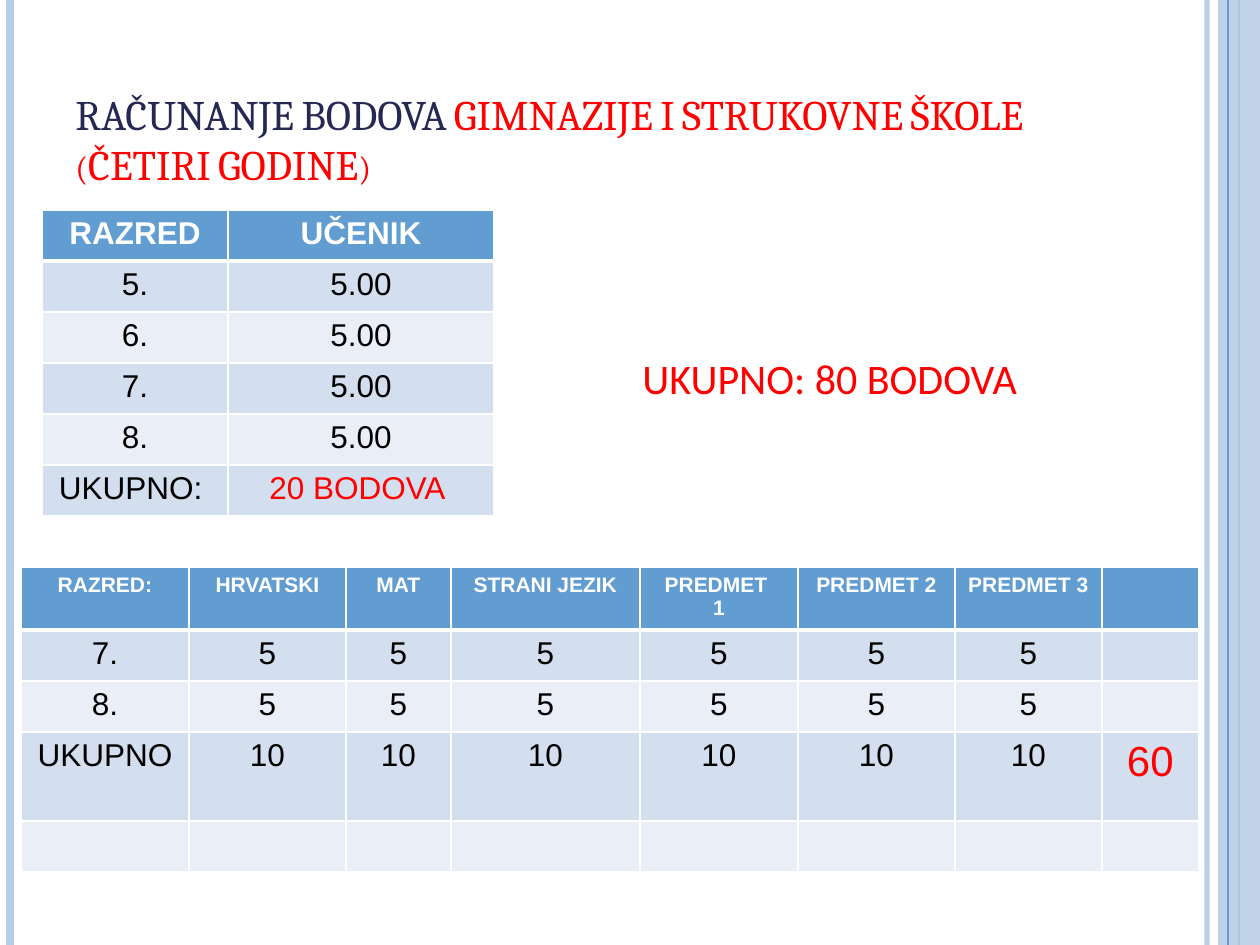
from dataclasses import dataclass

from lxml.etree import SubElement as Sub
from pptx import Presentation
from pptx.dml.color import RGBColor as Rgb
from pptx.enum.shapes import MSO_CONNECTOR as Conn, MSO_SHAPE as Shape
from pptx.enum.text import MSO_ANCHOR as Anchor, PP_ALIGN as Align
from pptx.oxml.ns import qn
from pptx.util import Pt

SCALE = 914400 / 126  # EMU per px
WIDE, HIGH = 1260, 945


@dataclass(frozen=True)
class Theme:
    white: str = "FFFFFF"
    black: str = "000000"
    navy: str = "242852"
    red: str = "FF0000"
    blue: str = "629DD1"
    pale: str = "B7CCE5"
    bands: tuple = ("D3DFEE", "EAEFF7")
    big: int = 24
    body: int = 18
    small: int = 12
    head: str = "Cambria"
    grid: str = "Arial"
    note: str = "Calibri"


T = Theme()


def px(n):
    return round(n * SCALE)


def tint(fill, color, alpha=100):
    """Solid colour with optional opacity in percent."""
    fill.solid()
    fill.fore_color.rgb = Rgb.from_string(color)
    if alpha < 100:
        node = fill._xPr.find(qn("a:solidFill"))[0]
        Sub(node, qn("a:alpha"), val=str(alpha * 1000))


def put(para, text, size=T.body, font=T.grid, color=T.black, bold=False, caps=False):
    """Add one formatted run."""
    run = para.add_run()
    run.text = text
    style = run.font
    style.size, style.name, style.bold = Pt(size), font, bold
    style.color.rgb = Rgb.from_string(color)
    if caps:
        run._r.get_or_add_rPr().set("cap", "small")


def rule(slide, x, color, width, alpha=100):
    """Full-height vertical line."""
    line = slide.shapes.add_connector(Conn.STRAIGHT, px(x), 0, px(x), px(HIGH))
    line.line.width = Pt(width)
    tint(line.line.fill, color, alpha)
    Sub(line._element.spPr, qn("a:effectLst"))


def band(slide, x, width, color, alpha):
    """Full-height strip."""
    box = slide.shapes.add_shape(Shape.RECTANGLE, px(x), 0, px(width), px(HIGH))
    box.shadow.inherit = False
    box.line.fill.background()
    tint(box.fill, color, alpha)


def label(slide, area, runs, anchor=Anchor.TOP):
    """Text box with one paragraph of (text, format) runs."""
    frame = slide.shapes.add_textbox(*map(px, area)).text_frame
    frame.word_wrap = True
    frame.vertical_anchor = anchor
    for text, style in runs:
        put(frame.paragraphs[0], text, **style)


def edge(cell, last):
    """White cell borders, with the bottom one of the given width."""
    props = cell._tc.get_or_add_tcPr()
    for side, width in zip("LRTB", (1, 1, 1, last)):
        line = Sub(props, qn("a:ln" + side), w=str(Pt(width)))
        Sub(Sub(line, qn("a:solidFill")), qn("a:srgbClr"), val=T.white)


def grid(slide, left, top, cols, rows, data, head, marks):
    """Banded table; marks gives special formats by (row, column)."""
    area = map(px, (left, top, sum(cols), sum(rows)))
    table = slide.shapes.add_table(len(rows), len(cols), *area).table
    table.first_row = table.horz_banding = False
    for col, width in zip(table.columns, cols):
        col.width = px(width)
    for row, height in zip(table.rows, rows):
        row.height = px(height)
    for r, line in enumerate(data):
        for c, text in enumerate(line):
            cell = table.cell(r, c)
            edge(cell, 1 if r else 3)
            tint(cell.fill, T.bands[(r - 1) % 2] if r else T.blue)
            style = marks.get((r, c), {}) if r else head
            frame = cell.text_frame
            for i, part in enumerate(text.split("\n")):
                para = frame.add_paragraph() if i else frame.paragraphs[0]
                para.alignment = Align.CENTER
                if part:
                    put(para, part, **style)


def main():
    deck = Presentation()
    deck.slide_width, deck.slide_height = px(WIDE), px(HIGH)
    slide = deck.slides.add_slide(deck.slide_layouts[6])

    # Side stripes
    rule(slide, 1207, T.pale, 3, 93)
    rule(slide, 10, T.pale, 4.5)
    rule(slide, 1239, T.blue, 1.5)
    band(slide, 1218, 42, T.pale, 87)
    rule(slide, 1228, T.blue, 0.75)

    # Title
    title = dict(size=T.big, font=T.head, caps=True)
    label(slide, (63, 38, 1029, 157), [
        ("RAČUNANJE BODOVA ", dict(title, color=T.navy)),
        ("GIMNAZIJE I STRUKOVNE ŠKOLE (ČETIRI GODINE)", dict(title, color=T.red)),
    ], Anchor.BOTTOM)

    # Average marks by year
    head = dict(color=T.white, bold=True)
    years = [[f"{n}.", "5.00"] for n in range(5, 9)]
    data = [["RAZRED", "UČENIK"], *years, ["UKUPNO: ", "20 BODOVA "]]
    grid(slide, 42, 210, (186, 266), [51] * 6, data, head, {(5, 1): dict(color=T.red)})

    # Marks by subject
    names = ["HRVATSKI", "MAT", "STRANI JEZIK", "PREDMET \n1", "PREDMET 2", "PREDMET 3"]
    count = len(names)
    data = [
        ["RAZRED:", *names, ""],
        *[[year, *["5"] * count, ""] for year in ("7.", "8.")],
        ["UKUPNO", *["10"] * count, "60"],
        [""] * (count + 2),
    ]
    cols = (168, 157, 105, 189, 158, 157, 147, 97)
    grid(slide, 21, 567, cols, (63, 51, 51, 89, 51), data,
         dict(head, size=T.small), {(3, 7): dict(size=T.big, color=T.red)})

    # Grand total
    label(slide, (630, 346, 474, 64),
          [("UKUPNO: 80 BODOVA", dict(size=T.big, font=T.note, color=T.red))])

    deck.save("out.pptx")


if __name__ == "__main__":
    main()
